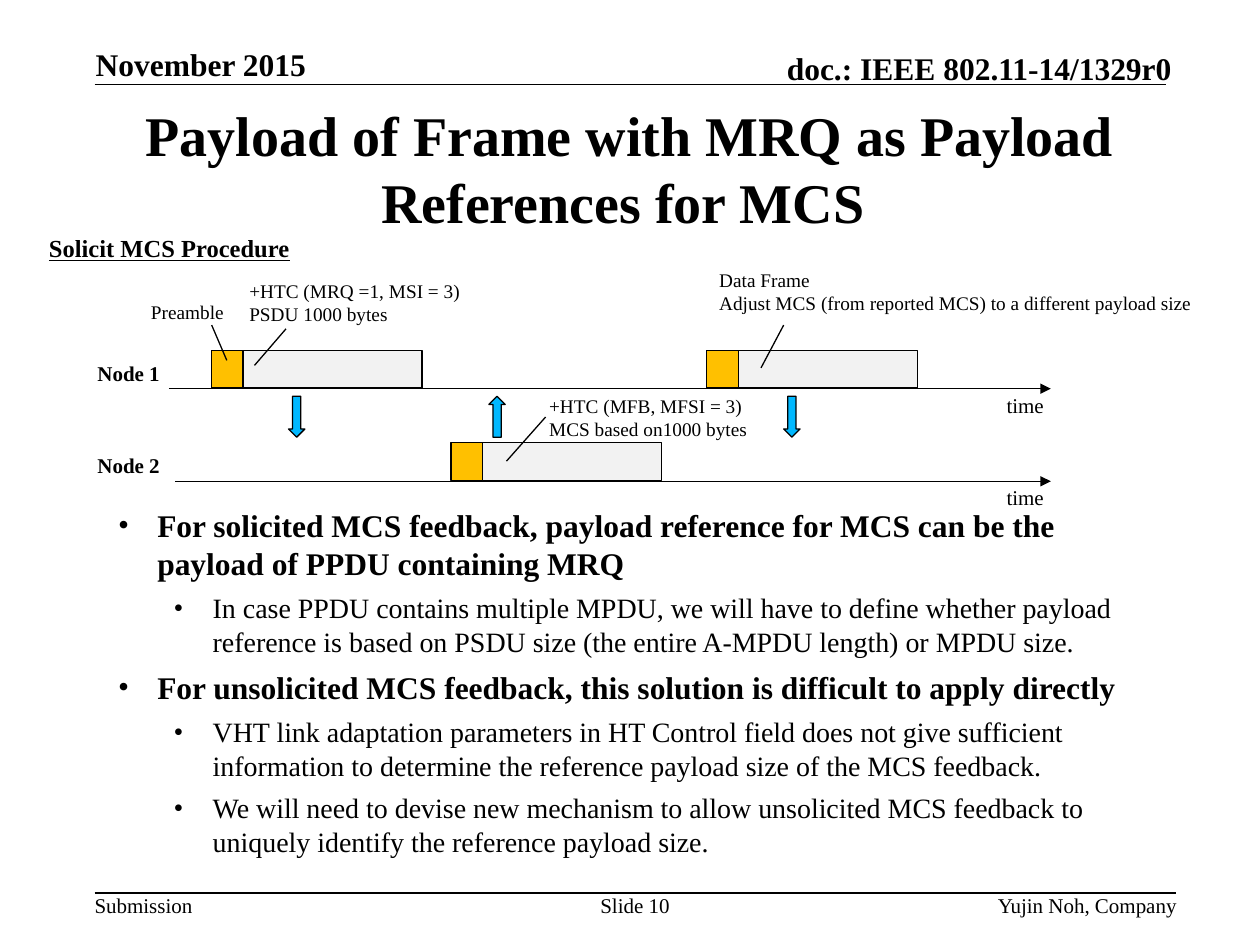
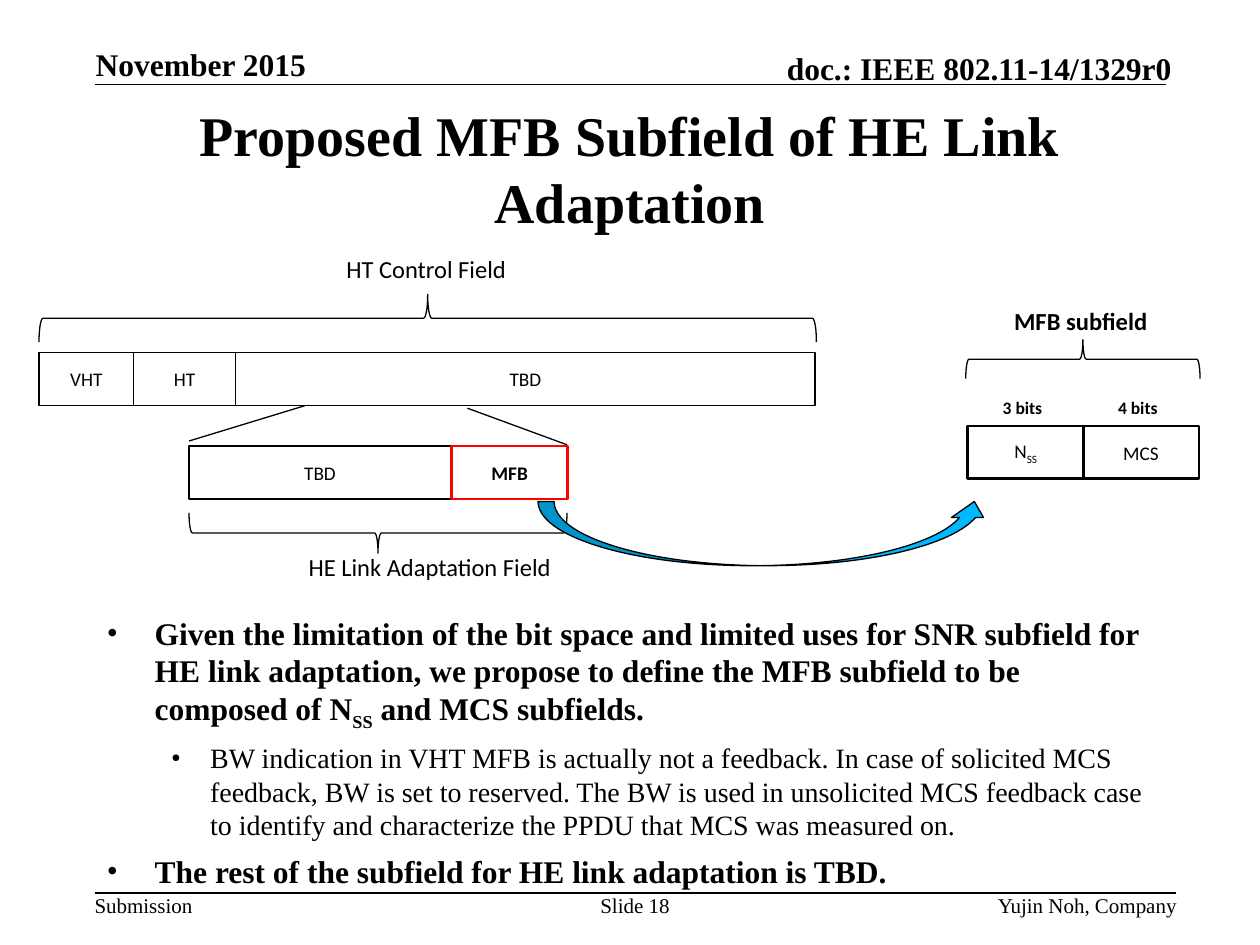
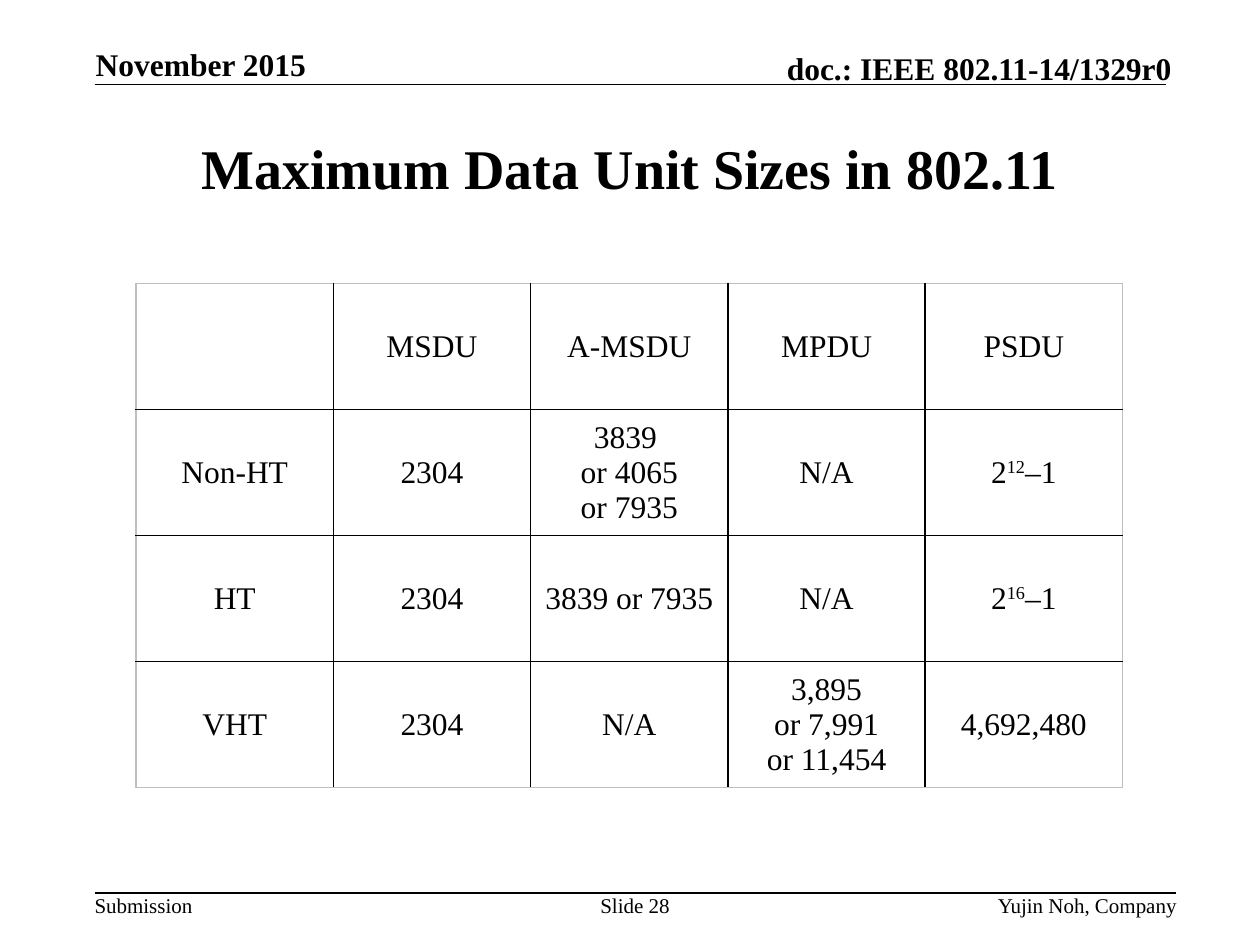
import pptx
import pptx.util
import pptx.dml.color
import pptx.enum.shapes
import pptx.enum.text
import pptx.oxml.ns
from lxml import etree

RGBColor = pptx.dml.color.RGBColor
BLACK = RGBColor(0x00, 0x00, 0x00)
RED = RGBColor(0xFF, 0x00, 0x00)
GOLD = RGBColor(0xFF, 0xC0, 0x00)
PALE_GREY = RGBColor(0xF2, 0xF2, 0xF2)
EDGE_GREY = RGBColor(0xBF, 0xBF, 0xBF)
BLUE = RGBColor(0x00, 0xB8, 0xFF)

SERIF = "Times New Roman"
SANS = "Calibri"

SLIDE_WIDTH = pptx.util.Inches(10)
SLIDE_HEIGHT = pptx.util.Inches(7.5)
COLUMN = SLIDE_WIDTH / 100
ROW = SLIDE_HEIGHT / 75

SHAPE = pptx.enum.shapes.MSO_SHAPE
ANCHOR = pptx.enum.text.MSO_ANCHOR
ALIGN = pptx.enum.text.PP_ALIGN
SUBSCRIPT = -25000
SUPERSCRIPT = 30000


def place(left, top, width, height):
    """Turn grid columns and rows into slide lengths."""
    return (round(left * COLUMN), round(top * ROW),
            round(width * COLUMN), round(height * ROW))


def add_xml(parent, tag, **attributes):
    return etree.SubElement(parent, pptx.oxml.ns.qn(tag), attributes)


def write_runs(paragraph, text, size, font=SERIF, bold=False,
               underline=False, shift=SUBSCRIPT):
    """Write text whose parts between bars are raised or lowered."""
    for index, part in enumerate(text.split("|")):
        run = paragraph.add_run()
        run.text = part
        run.font.size = pptx.util.Pt(size)
        run.font.name = font
        run.font.bold = bold
        run.font.underline = underline
        run.font.color.rgb = BLACK
        if index % 2:
            run.font._element.set("baseline", str(shift))


def write_lines(text_frame, text, size, align=ALIGN.LEFT, **style):
    for index, line in enumerate(text.split("\n")):
        paragraph = text_frame.paragraphs[0] if index == 0 else text_frame.add_paragraph()
        paragraph.alignment = align
        write_runs(paragraph, line, size, **style)


def add_text(slide, box, text, size, anchor=ANCHOR.TOP, inset=True, **style):
    shape = slide.shapes.add_textbox(*place(*box))
    text_frame = shape.text_frame
    text_frame.word_wrap = True
    text_frame.vertical_anchor = anchor
    if not inset:
        text_frame.margin_left = text_frame.margin_right = 0
        text_frame.margin_top = text_frame.margin_bottom = 0
    write_lines(text_frame, text, size, **style)
    return shape


def add_label(slide, box, text, size, **style):
    """Add an unwrapped caption that fits its text."""
    text_frame = add_text(slide, box, text, size, **style).text_frame
    text_frame.word_wrap = False
    text_frame.auto_size = pptx.enum.text.MSO_AUTO_SIZE.SHAPE_TO_FIT_TEXT


def add_line(slide, start, end, width=0.75, arrow=False):
    ends = place(*start, *end)
    line = slide.shapes.add_connector(pptx.enum.shapes.MSO_CONNECTOR.STRAIGHT, *ends)
    line.line.color.rgb = BLACK
    line.line.width = pptx.util.Pt(width)
    if arrow:
        add_xml(line.line._get_or_add_ln(), "a:tailEnd", type="triangle")
    add_xml(line._element.spPr, "a:effectLst")


def add_shape(slide, kind, box, fill=None, line=BLACK, width=0.75, rotation=0):
    shape = slide.shapes.add_shape(kind, *place(*box))
    shape.shadow.inherit = False
    shape.rotation = rotation
    if fill is None:
        shape.fill.background()
    else:
        shape.fill.solid()
        shape.fill.fore_color.rgb = fill
    shape.line.color.rgb = line
    shape.line.width = pptx.util.Pt(width)
    return shape


def add_field(slide, box, text, bold=False, **outline):
    shape = add_shape(slide, SHAPE.RECTANGLE, box, **outline)
    shape.text_frame.vertical_anchor = ANCHOR.MIDDLE
    write_lines(shape.text_frame, text, 11, align=ALIGN.CENTER, font=SANS, bold=bold)


def add_brace(slide, left, top, width, height, rotation):
    """Add a horizontal brace; the box is the one seen after turning."""
    middle, centre = left + width / 2, top + height / 2
    box = (middle - height / 2, centre - width / 2, height, width)
    add_shape(slide, SHAPE.RIGHT_BRACE, box, rotation=rotation)


def add_bullets(slide, box, margin, items):
    """Add (level, text) bullets; margin is the first level's indent in columns."""
    text_frame = add_text(slide, box, "", 18).text_frame
    for index, (level, text) in enumerate(items):
        paragraph = text_frame.add_paragraph() if index else text_frame.paragraphs[0]
        paragraph.level = level
        hanging = 3.1 if level else margin
        properties = paragraph._p.get_or_add_pPr()
        properties.set("marL", str(round((margin + 4.4 * level) * COLUMN)))
        properties.set("indent", str(round(-hanging * COLUMN)))
        add_xml(properties, "a:buFont", typeface=SERIF)
        add_xml(properties, "a:buChar", char="•")
        if index:
            paragraph.space_before = pptx.util.Pt(6 - level)
        write_runs(paragraph, text, 18 - 2 * level, bold=level == 0)


def add_page(presentation, number, title):
    """Add a slide with the shared header, title and footer."""
    slide = presentation.slides.add_slide(presentation.slide_layouts[6])
    add_line(slide, (7.5, 6.7), (92.5, 6.7), width=1)
    add_line(slide, (7.5, 70.85), (93.3, 70.85), width=1)
    header = dict(size=18, anchor=ANCHOR.BOTTOM, inset=False, bold=True)
    add_text(slide, (7.6, 3.6, 20.5, 3), "November 2015", **header)
    add_text(slide, (54.7, 3.9, 38.3, 3), "doc.: IEEE 802.11-14/1329r0",
             align=ALIGN.RIGHT, **header)
    add_text(slide, (7.5, 7.5, 85, 11.6), title, 32, anchor=ANCHOR.MIDDLE,
             align=ALIGN.CENTER, bold=True)
    footers = [(7.5, 7.8, "Submission", ALIGN.LEFT),
               (47.5, 5.8, f"Slide {number}", ALIGN.CENTER),
               (58.6, 34.8, "Yujin Noh, Company", ALIGN.RIGHT)]
    for left, width, text, align in footers:
        add_text(slide, (left, 70.8, width, 2), text, 12, inset=False, align=align)
    return slide


def add_time_axis(slide, name, start, row):
    add_line(slide, (start, row), (83.4, row), arrow=True)
    add_label(slide, (6.75, row - 2.75, 7, 3), name, 12, bold=True)
    add_label(slide, (78.9, row - 0.2, 5.2, 3), "time", 12)


def add_frame(slide, left, axis_row):
    """Add a preamble and payload standing on a time axis."""
    top, preamble = axis_row - 3.05, 2.5
    add_shape(slide, SHAPE.RECTANGLE, (left, top, preamble, 3), fill=GOLD)
    add_shape(slide, SHAPE.RECTANGLE, (left + preamble, top, 14.2, 3), fill=PALE_GREY)


def build_procedure_slide(presentation):
    slide = add_page(presentation, 10,
                     "Payload of Frame with MRQ as Payload References for MCS ")
    add_bullets(slide, (8.4, 39.7, 85, 31.5), 3.1, [
        (0, "For solicited MCS feedback, payload reference for MCS can be the "
            "payload of PPDU containing MRQ"),
        (1, "In case PPDU contains multiple MPDU, we will have to define whether payload "
            "reference is based on PSDU size (the entire A-MPDU length) or MPDU size."),
        (0, "For unsolicited MCS feedback, this solution is difficult to apply directly"),
        (1, "VHT link adaptation parameters in HT Control field does not give sufficient "
            "information to determine the reference payload size of the MCS feedback."),
        (1, "We will need to devise new mechanism to allow unsolicited MCS feedback to "
            "uniquely identify the reference payload size."),
    ])
    add_label(slide, (2.9, 18, 21.2, 3.4), "Solicit MCS Procedure", 14,
              bold=True, underline=True)
    node_1, node_2 = 30.85, 38.2
    add_time_axis(slide, "Node 1", 13.4, node_1)
    add_time_axis(slide, "Node 2", 13.9, node_2)
    for left, row in [(16.8, node_1), (35.8, node_2), (56.1, node_1)]:
        add_frame(slide, left, row)
    captions = [
        ((11, 23.3, 8, 2.9), "Preamble"),
        ((18.8, 21.7, 18.9, 4.7), "+HTC (MRQ =1, MSI = 3)\nPSDU 1000 bytes"),
        ((42.6, 30.8, 25.8, 4.7), "+HTC (MFB, MFSI = 3)\nMCS based on1000 bytes"),
        ((56.1, 20.8, 39.6, 4.7),
         "Data Frame\nAdjust MCS (from reported MCS) to a different payload size"),
    ]
    for box, text in captions:
        add_label(slide, box, text, 11)
    pointers = [((18, 28.6), (16.8, 25.8)), ((20.2, 29), (22.7, 26.1)),
                ((40.2, 36.6), (43.3, 33.1)), ((60.4, 29.2), (62.2, 25.8))]
    for start, end in pointers:
        add_line(slide, start, end)
    for left, rotation in [(22.9, 0), (38.8, 180), (62.2, 0)]:
        add_shape(slide, SHAPE.DOWN_ARROW, (left, 31.45, 1.3, 3.25),
                  fill=BLUE, rotation=rotation)


def build_subfield_slide(presentation):
    slide = add_page(presentation, 18, "Proposed MFB Subfield of HE Link Adaptation")
    add_bullets(slide, (7.5, 48.2, 85, 15.8), 3.8, [
        (0, "Given the limitation of the bit space and limited uses for SNR subfield for "
            "HE link adaptation, we propose to define the MFB subfield to be "
            "composed of N|SS| and MCS subfields."),
        (1, "BW indication in VHT MFB is actually not a feedback. In case of solicited MCS "
            "feedback, BW is set to reserved. The BW is used in unsolicited MCS feedback "
            "case to identify and characterize the PPDU that MCS was measured on."),
        (0, "The rest of the subfield for HE link adaptation is TBD."),
    ])
    for left, width, text in [(3.1, 7.5, "VHT"), (10.6, 8.1, "HT"), (18.7, 46, "TBD")]:
        add_field(slide, (left, 28, width, 4.2), text)
    add_brace(slide, 3.1, 23.35, 61.7, 3.8, 270)
    add_line(slide, (24.2, 32.2), (15, 35))
    add_line(slide, (37.1, 32.4), (45, 35.3))

    add_field(slide, (15, 35.4, 20.8, 4.2), "TBD")
    add_field(slide, (35.85, 35.4, 9.2, 4.2), "MFB", bold=True, line=RED, width=1.5)
    add_brace(slide, 15, 40.7, 30, 3.2, 90)

    add_brace(slide, 76.65, 26.95, 18.6, 3.1, 270)
    for index, (bits, text) in enumerate([("3 bits", "N|SS"), ("4 bits", "MCS")]):
        left = 76.8 + 9.15 * index
        add_field(slide, (left, 33.8, 9.2, 4.2), text, width=1.5)
        add_label(slide, (left + 1.8, 31, 5.2, 2.7), bits, 10, font=SANS, bold=True)

    add_label(slide, (26.5, 19.7, 14.8, 3.4), "HT Control Field", 14, font=SANS)
    add_label(slide, (23.5, 43.3, 21.5, 3.4), "HE Link Adaptation Field", 14, font=SANS)
    add_label(slide, (79.5, 23.8, 12.7, 3.4), "MFB subfield", 14, font=SANS, bold=True)
    add_shape(slide, SHAPE.CURVED_UP_ARROW, (42.7, 39.8, 35.9, 5.1), fill=BLUE)


def set_border(cell, side, color):
    line = add_xml(cell._tc.get_or_add_tcPr(), f"a:ln{side}",
                   w=str(pptx.util.Pt(1)))
    add_xml(add_xml(line, "a:solidFill"), "a:srgbClr", val=str(color))


def add_grid_table(slide, box, rows):
    """Add a plain table with black inner lines and a grey edge."""
    last_row, last_column = len(rows) - 1, len(rows[0]) - 1
    table = slide.shapes.add_table(len(rows), len(rows[0]), *place(*box)).table
    table.first_row = table.horz_banding = False
    for row, texts in enumerate(rows):
        for column, text in enumerate(texts):
            cell = table.cell(row, column)
            cell.vertical_anchor = ANCHOR.MIDDLE
            edges = {"L": column == 0, "R": column == last_column,
                     "T": row == 0, "B": row == last_row}
            for side, is_outer in edges.items():
                set_border(cell, side, EDGE_GREY if is_outer else BLACK)
            cell.fill.background()
            if text:
                write_lines(cell.text_frame, text, 18, align=ALIGN.CENTER,
                            shift=SUPERSCRIPT)


def build_sizes_slide(presentation):
    slide = add_page(presentation, 28, "Maximum Data Unit Sizes in 802.11")
    add_grid_table(slide, (10.8, 22.5, 78.3, 40), [
        ["", "MSDU", "A-MSDU", "MPDU", "PSDU"],
        ["Non-HT", "2304", "3839 \nor 4065\nor 7935", "N/A", "2|12|–1"],
        ["HT", "2304", "3839 or 7935", "N/A", "2|16|–1"],
        ["VHT", "2304", "N/A", "3,895\nor 7,991\nor 11,454", "4,692,480"],
    ])


def main():
    presentation = pptx.Presentation()
    presentation.slide_width = SLIDE_WIDTH
    presentation.slide_height = SLIDE_HEIGHT
    build_procedure_slide(presentation)
    build_subfield_slide(presentation)
    build_sizes_slide(presentation)
    presentation.save("out.pptx")


if __name__ == "__main__":
    main()
